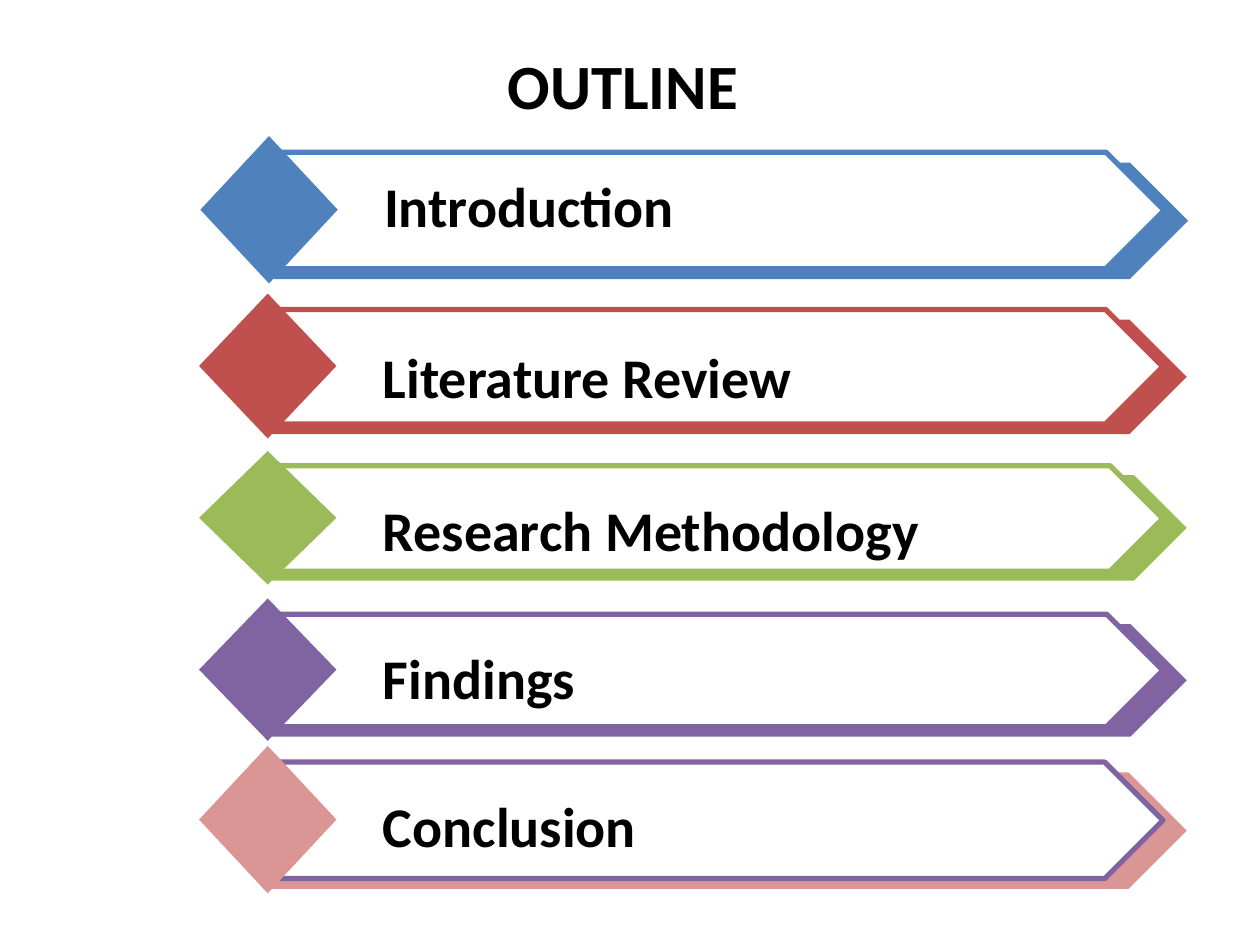
import dataclasses

import pptx
import pptx.dml.color
import pptx.enum.shapes
import pptx.enum.text
import pptx.util

Inches = pptx.util.Inches
Shapes = pptx.enum.shapes.MSO_SHAPE
Anchor = pptx.enum.text.MSO_ANCHOR
Align = pptx.enum.text.PP_ALIGN


@dataclasses.dataclass(frozen=True)
class Theme:
    font: str = "Calibri"
    title_size: int = 36
    label_size: int = 32
    line_width: int = 3
    text: str = "000000"
    paper: str = "FFFFFF"
    blue: str = "4F81BD"
    red: str = "C0504D"
    green: str = "9BBB59"
    purple: str = "8064A2"
    pink: str = "D99694"


THEME = Theme()

DIAMOND_WIDTH = 1.09
PLATE_INDENT = 0.58
TEXT_INDENT = 1.36
SHADOW_WIDTH = 7.26
FACE_WIDTH = 7.07
PLATE_HEIGHT_RATIO = 0.79
FACE_TOP_RATIO = 0.11
SHADOW_TOP_RATIO = 0.18


def rgb(color):
    return pptx.dml.color.RGBColor.from_string(color)


def add_filled_shape(slide, kind, left, top, width, height, fill, outline=None):
    shape = slide.shapes.add_shape(
        kind, Inches(left), Inches(top), Inches(width), Inches(height)
    )
    shape.shadow.inherit = False
    shape.fill.solid()
    shape.fill.fore_color.rgb = rgb(fill)
    if outline:
        shape.line.color.rgb = rgb(outline)
        shape.line.width = pptx.util.Pt(THEME.line_width)
    else:
        shape.line.fill.background()
    return shape


def add_text(slide, text, left, top, width, height, size, align, anchor):
    box = slide.shapes.add_textbox(
        Inches(left), Inches(top), Inches(width), Inches(height)
    )
    frame = box.text_frame
    frame.word_wrap = True
    frame.vertical_anchor = anchor
    paragraph = frame.paragraphs[0]
    paragraph.text = text
    paragraph.alignment = align
    paragraph.font.name = THEME.font
    paragraph.font.size = pptx.util.Pt(size)
    paragraph.font.bold = True
    paragraph.font.color.rgb = rgb(THEME.text)


def add_title(slide, left, top, width, height):
    add_text(slide, "OUTLINE ", left, top, width, height,
             THEME.title_size, Align.CENTER, Anchor.MIDDLE)


def add_outline_row(slide, left, top, height, label, label_top, color, outline):
    plate_left = left + PLATE_INDENT
    plate_height = height * PLATE_HEIGHT_RATIO
    add_filled_shape(slide, Shapes.PENTAGON, plate_left,
                     top + height * SHADOW_TOP_RATIO,
                     SHADOW_WIDTH, plate_height, color)
    add_filled_shape(slide, Shapes.PENTAGON, plate_left,
                     top + height * FACE_TOP_RATIO,
                     FACE_WIDTH, plate_height, THEME.paper, outline)
    add_filled_shape(slide, Shapes.DIAMOND, left, top,
                     DIAMOND_WIDTH, height, color)
    add_text(slide, label, left + TEXT_INDENT, label_top, 5.68, 0.64,
             THEME.label_size, Align.LEFT, Anchor.TOP)


def main():
    presentation = pptx.Presentation()
    presentation.slide_width = Inches(10)
    presentation.slide_height = Inches(7.5)
    slide = presentation.slides.add_slide(presentation.slide_layouts[6])

    add_title(slide, 0, 0.25, 10, 0.84)
    rows = [
        (1.59, 1.08, 1.17, "Introduction", 1.31, THEME.blue, THEME.blue),
        (1.58, 2.33, 1.15, "Literature Review", 2.67, THEME.red, THEME.red),
        (1.58, 3.58, 1.06, "Research Methodology", 3.88, THEME.green, THEME.green),
        (1.58, 4.75, 1.13, "Findings", 5.06, THEME.purple, THEME.purple),
        (1.58, 5.92, 1.17, "Conclusion", 6.23, THEME.pink, THEME.purple),
    ]
    for row in rows:
        add_outline_row(slide, *row)

    presentation.save("out.pptx")


if __name__ == "__main__":
    main()
